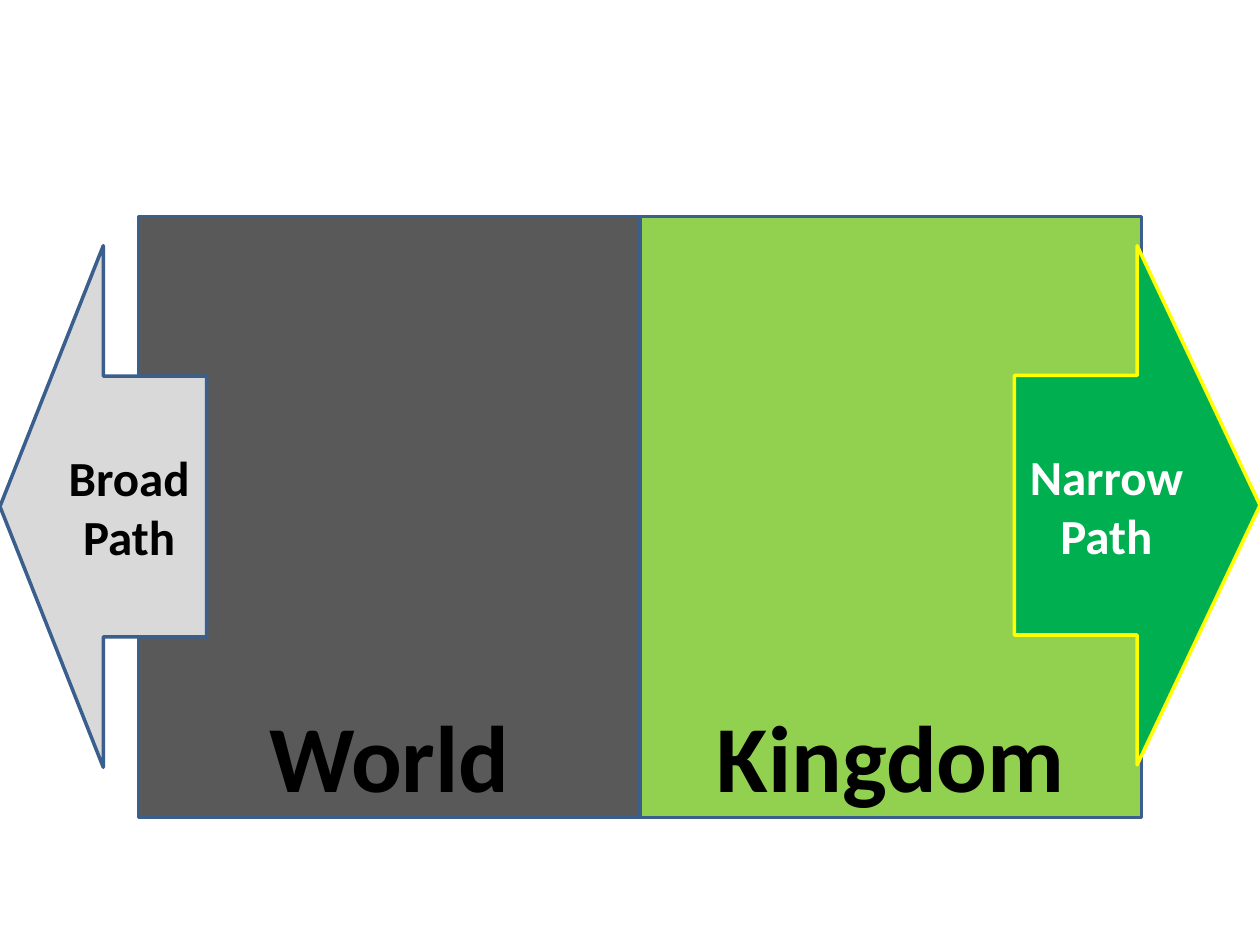
"""Build the slide of the broad path and the narrow path."""
import dataclasses

import pptx
import pptx.dml.color
import pptx.enum.shapes
import pptx.enum.text
import pptx.util

Inches = pptx.util.Inches
Color = pptx.dml.color.RGBColor.from_string
Kind = pptx.enum.shapes.MSO_SHAPE
Anchor = pptx.enum.text.MSO_ANCHOR


@dataclasses.dataclass(frozen=True)
class Theme:
    font: str = "Calibri"
    large: int = 54
    small: int = 28
    line: int = 2
    black: str = "000000"
    white: str = "FFFFFF"
    blue: str = "3A5F8C"
    yellow: str = "FFFF00"
    dark: str = "595959"
    pale: str = "D9D9D9"
    lime: str = "92D050"
    green: str = "00B050"


@dataclasses.dataclass(frozen=True)
class Block:
    text: str
    kind: Kind
    left: float
    top: float
    width: float
    height: float
    fill: str
    edge: str
    ink: str
    size: int
    anchor: Anchor


THEME = Theme()
WIDTH, HEIGHT = 10, 7.5
MIDDLE, TOP = 5.08, 1.72
SIDE, TALL = 3.98, 4.77
BROAD, NARROW, LEVEL = 1.64, 1.95, 1.95


def realm(text: str, left: float, fill: str) -> Block:
    return Block(text, Kind.RECTANGLE, left, TOP, SIDE, TALL, fill,
                 THEME.blue, THEME.black, THEME.large, Anchor.BOTTOM)


def arrow(text: str, kind: Kind, left: float, width: float, height: float,
          fill: str, edge: str, ink: str) -> Block:
    return Block(text, kind, left, LEVEL, width, height, fill,
                 edge, ink, THEME.small, Anchor.MIDDLE)


def draw(slide: pptx.slide.Slide, block: Block) -> None:
    shape = slide.shapes.add_shape(
        block.kind, Inches(block.left), Inches(block.top),
        Inches(block.width), Inches(block.height))
    shape.shadow.inherit = False
    shape.fill.solid()
    shape.fill.fore_color.rgb = Color(block.fill)
    shape.line.color.rgb = Color(block.edge)
    shape.line.width = pptx.util.Pt(THEME.line)
    frame = shape.text_frame
    frame.text = block.text
    frame.word_wrap = True
    frame.vertical_anchor = block.anchor
    words = frame.paragraphs[0]
    words.alignment = pptx.enum.text.PP_ALIGN.CENTER
    font = words.runs[0].font
    font.name = THEME.font
    font.size = pptx.util.Pt(block.size)
    font.bold = True
    font.color.rgb = Color(block.ink)


def main() -> None:
    deck = pptx.Presentation()
    deck.slide_width, deck.slide_height = Inches(WIDTH), Inches(HEIGHT)
    slide = deck.slides.add_slide(deck.slide_layouts[6])
    blocks = [
        realm("Kingdom", MIDDLE, THEME.lime),
        realm("World", MIDDLE - SIDE, THEME.dark),
        arrow("Narrow Path", Kind.RIGHT_ARROW, WIDTH - NARROW, NARROW, 4.12,
              THEME.green, THEME.yellow, THEME.white),
        arrow("Broad Path", Kind.LEFT_ARROW, 0, BROAD, 4.14,
              THEME.pale, THEME.blue, THEME.black),
    ]
    for block in blocks:
        draw(slide, block)
    deck.save("out.pptx")


if __name__ == "__main__":
    main()
